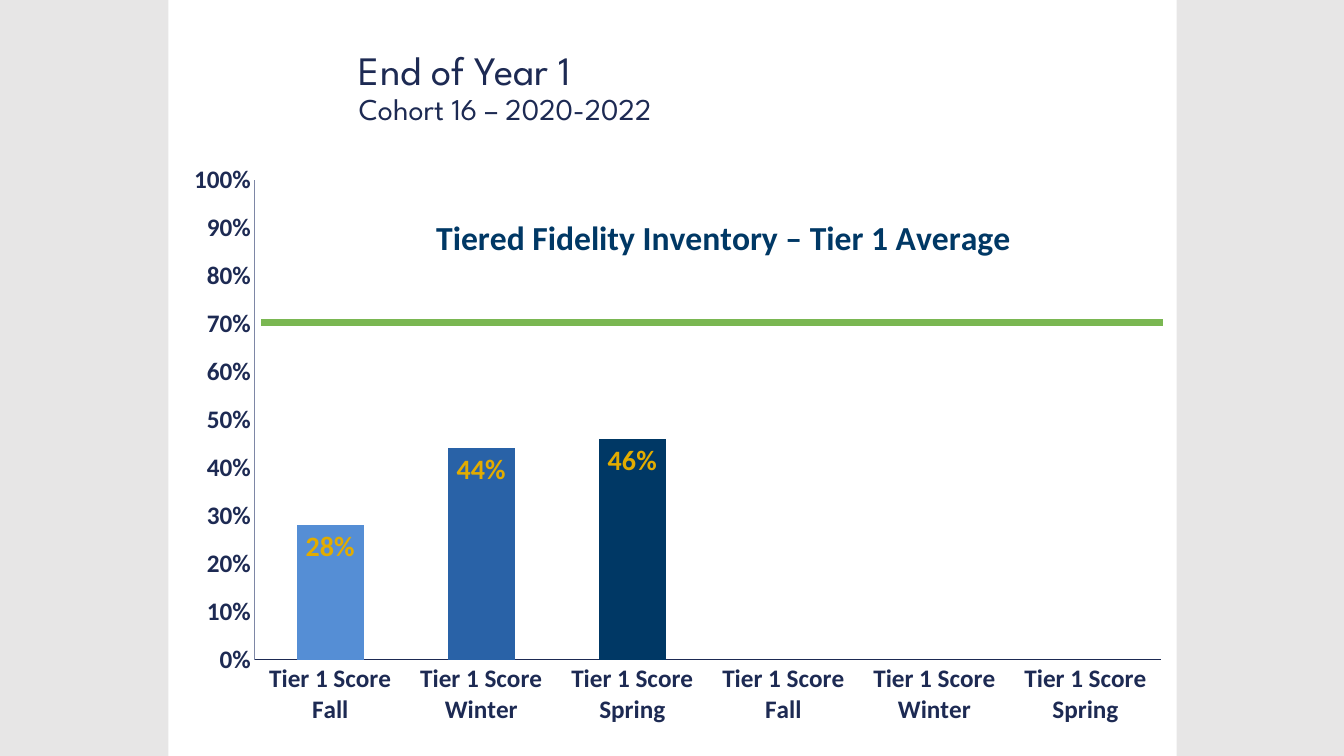
import pptx
import pptx.chart.data
import pptx.dml.color
import pptx.enum.chart
import pptx.enum.shapes
import pptx.enum.text
import pptx.oxml
import pptx.oxml.ns
import pptx.util
from pptx.util import Inches

NAVY, DEEP_BLUE, GOLD = "1D2A53", "003865", "E2AC00"
BAR_COLORS = ["558ED5", "2962A7", DEEP_BLUE]
SEASONS = ["Fall", "Winter", "Spring"]
SCORES = [0.28, 0.44, 0.46, None, None, None]


def rgb(value):
    return pptx.dml.color.RGBColor.from_string(value)


def set_font(font, name, size, color, bold=False):
    font.name = name
    font.size = pptx.util.Pt(size)
    font.bold = bold
    font.color.rgb = rgb(color)


def set_line(line, color, width):
    line.color.rgb = rgb(color)
    line.width = pptx.util.Pt(width)


def add_panel(s, x, y, w, h, color):
    sp = s.shapes.add_shape(pptx.enum.shapes.MSO_SHAPE.RECTANGLE, x, y, w, h)
    sp.shadow.inherit = False
    sp.fill.solid()
    sp.fill.fore_color.rgb = rgb(color)
    sp.line.fill.background()
    s.shapes._spTree.insert(2, sp._element)  # send behind the title


def format_title(s, x, y, w, h, lines):
    sp = s.shapes.title
    sp.left, sp.top, sp.width, sp.height = x, y, w, h
    tf = sp.text_frame
    tf.word_wrap = True
    tf.auto_size = pptx.enum.text.MSO_AUTO_SIZE.NONE
    tf.vertical_anchor = pptx.enum.text.MSO_ANCHOR.MIDDLE
    p = tf.paragraphs[0]
    p.alignment = pptx.enum.text.PP_ALIGN.LEFT
    p.line_spacing = 0.9
    for i, (text, size) in enumerate(lines):
        if i:
            p.add_line_break()
        r = p.add_run()
        r.text = text
        set_font(r.font, "League Spartan", size, NAVY)


def manual_layout(x, y, w=None, h=None):
    """Build a chart layout from fractions of the chart's size."""
    parts = [("xMode", "edge"), ("yMode", "edge"), ("x", x), ("y", y)]
    if w is not None:
        parts = [("layoutTarget", "inner")] + parts + [("w", w), ("h", h)]
    body = "".join(f'<c:{tag} val="{val}"/>' for tag, val in parts)
    return pptx.oxml.parse_xml(
        f'<c:layout {pptx.oxml.ns.nsdecls("c")}>'
        f"<c:manualLayout>{body}</c:manualLayout></c:layout>")


def replace_layout(parent, layout, index):
    for old in parent.findall(pptx.oxml.ns.qn("c:layout")):
        parent.remove(old)
    parent.insert(index, layout)


def format_axis(axis, color):
    axis.has_major_gridlines = False
    axis.major_tick_mark = pptx.enum.chart.XL_TICK_MARK.NONE
    axis.minor_tick_mark = pptx.enum.chart.XL_TICK_MARK.NONE
    set_font(axis.tick_labels.font, "Calibri", 18, NAVY, True)
    set_line(axis.format.line, color, 0.75)


def format_bars(plot):
    plot.gap_width, plot.overlap = 125, -100
    plot.vary_by_categories = False
    for i in range(len(SCORES)):
        fill = plot.series[0].points[i].format.fill
        fill.solid()
        fill.fore_color.rgb = rgb(BAR_COLORS[i % len(BAR_COLORS)])
    plot.has_data_labels = True
    labels = plot.data_labels
    labels.show_value = True
    labels.position = pptx.enum.chart.XL_LABEL_POSITION.INSIDE_END
    labels.number_format = "0%"
    labels.number_format_is_linked = False
    set_font(labels.font, "Calibri", 20, GOLD, True)


def add_score_chart(s, x, y, w, h):
    data = pptx.chart.data.CategoryChartData(number_format="0%")
    data.categories = [f"Tier 1 Score\n{season}" for season in SEASONS * 2]
    data.add_series("Series 1", SCORES)
    chart = s.shapes.add_chart(
        pptx.enum.chart.XL_CHART_TYPE.COLUMN_CLUSTERED, x, y, w, h, data).chart
    set_font(chart.font, "Calibri", 10, "3A54A5")
    chart.has_legend = False

    # Chart title over the plot
    chart.has_title = True
    title = chart.chart_title
    r = title.text_frame.paragraphs[0].add_run()
    r.text = "Tiered Fidelity Inventory – Tier 1 Average"
    set_font(r.font, "Calibri", 24, DEEP_BLUE, True)
    title.include_in_layout = True
    replace_layout(title._element, manual_layout(0.25, 0.08), 1)

    # Axes
    format_axis(chart.category_axis, NAVY)
    axis = chart.value_axis
    format_axis(axis, "7E87A6")
    axis.minimum_scale, axis.maximum_scale, axis.major_unit = 0, 1, 0.1
    axis.tick_labels.number_format = "0%"
    axis.tick_labels.number_format_is_linked = False

    # Plot area and bars
    plot_area = chart._chartSpace.chart.plotArea
    replace_layout(plot_area, manual_layout(0.07, 0.03, 0.93, 0.83), 0)
    format_bars(chart.plots[0])


def add_goal_line(s, x1, x2, y):
    line = s.shapes.add_connector(
        pptx.enum.shapes.MSO_CONNECTOR.STRAIGHT, x1, y, x2, y)
    set_line(line.line, "7AB752", 4.5)
    line._element.spPr.append(pptx.oxml.parse_xml(
        f'<a:effectLst {pptx.oxml.ns.nsdecls("a")}/>'))


def main():
    prs = pptx.Presentation()
    prs.slide_width, prs.slide_height = Inches(13.33), Inches(7.5)
    s = prs.slides.add_slide(prs.slide_layouts[5])

    # Grey surround with a white page
    s.background.fill.solid()
    s.background.fill.fore_color.rgb = rgb("E7E6E6")
    add_panel(s, Inches(1.67), Inches(0), Inches(10), Inches(7.5), "FFFFFF")

    # Heading
    format_title(s, Inches(3.46), Inches(0.38), Inches(7.64), Inches(1),
                 [("End of Year 1", 28.8), ("Cohort 16 – 2020-2022", 21.6)])

    # Scores and the 70% goal
    add_score_chart(s, Inches(1.85), Inches(1.61), Inches(9.67), Inches(5.74))
    add_goal_line(s, Inches(2.59), Inches(11.53), Inches(3.2))
    prs.save("out.pptx")


if __name__ == "__main__":
    main()
